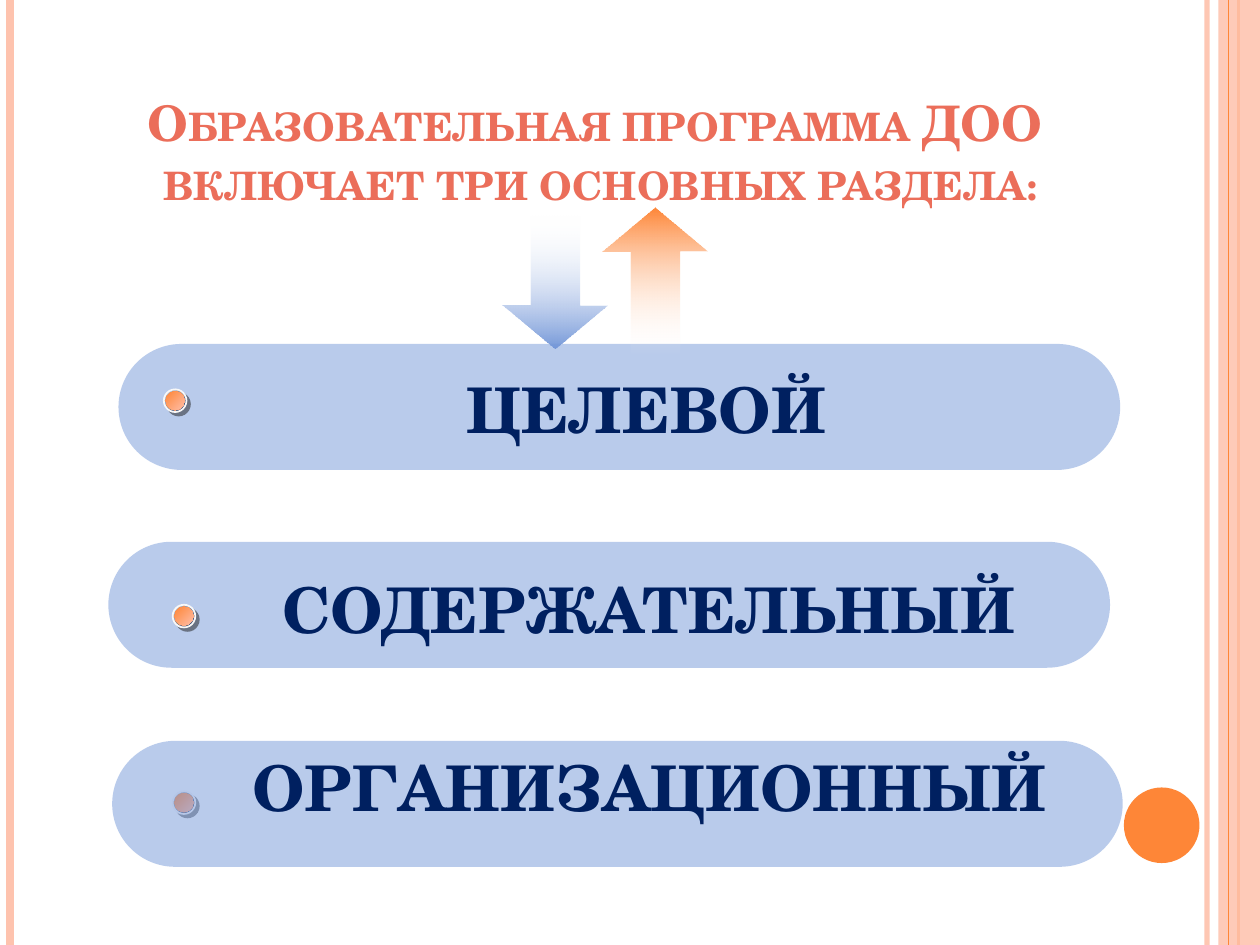
from pptx import Presentation
from pptx.dml.color import RGBColor
from pptx.enum.shapes import MSO_CONNECTOR, MSO_SHAPE as SHAPE
from pptx.enum.text import MSO_ANCHOR as ANCHOR, PP_ALIGN
from pptx.oxml import parse_xml
from pptx.oxml.ns import nsdecls, qn
from pptx.oxml.xmlchemy import OxmlElement
from pptx.util import Inches, Pt

FONT = "TeX Gyre Schola"
COLORS = {
    "peach": "FEC3AE", "orange": "FE8637", "light_orange": "FEBEA8",
    "coral": "EB6E5A", "blue": "7598D9", "navy": "002060", "white": "FFFFFF",
    "ring_light": "DDDDE1", "ring_dark": "223864", "ring_line": "F8F8F8",
    "shadow": "1C1C1C",
}
TITLE = "Образовательная программа ДОО \vвключает три основных раздела:"
TITLE_BOX = (0.86, 0.47, 7.81, 1.25)
STRIPES = [(9.58, "peach", 3, 93), (0.08, "peach", 4.5, 100), (9.83, "orange", 1.5, 100)]
THIN_STRIPE = (9.75, "orange", 0.75, 100)
SECTIONS = [
    {"text": "ЦЕЛЕВОЙ", "bar": (0.94, 2.73, 7.95, 1), "label": (1.64, 2.96, 6.98, 0.65),
     "bullet": (1.3, 3.09)},
    {"text": "СОДЕРЖАТЕЛЬНЫЙ", "bar": (0.86, 4.3, 7.95, 1), "label": (1.72, 4.55, 6.86, 0.65),
     "bullet": (1.37, 4.8)},
    {"text": "ОРГАНИЗАЦИОННЫЙ", "bar": (0.89, 5.88, 8.02, 1), "label": (1.81, 5.96, 6.69, 0.65),
     "bullet": (1.37, 6.28)},
]
DOWN_ARROW = ((3.87, 1.82, 1.07, 0.83), 90, "blue")
UP_ARROW = ((4.61, 1.82, 1.18, 0.83), 270, "orange")
RING, DOT = 0.18, 0.15

prs = Presentation()
prs.slide_width, prs.slide_height = Inches(10), Inches(7.5)
s = prs.slides.add_slide(prs.slide_layouts[6])


def rgb(name):
    return RGBColor.from_string(COLORS[name])


def set_alpha(sp, percent):
    alpha = OxmlElement("a:alpha")
    alpha.set("val", str(percent * 1000))
    sp._element.spPr.find(".//" + qn("a:srgbClr")).append(alpha)


def add_shape(kind, box, fill=None, alpha=100, parent=s):
    sp = parent.shapes.add_shape(kind, *map(Inches, box))
    sp.shadow.inherit = False
    sp.line.fill.background()
    if fill:
        sp.fill.solid()
        sp.fill.fore_color.rgb = rgb(fill)
        if alpha < 100:
            set_alpha(sp, alpha)
    return sp


def set_gradient(sp, names, angle):
    sp.fill.gradient()
    sp.fill.gradient_angle = angle
    for stop, position, name in zip(sp.fill.gradient_stops, (0, 1), names):
        stop.position = position
        stop.color.rgb = rgb(name)


def add_stripe(x, color, width, alpha):
    line = s.shapes.add_connector(
        MSO_CONNECTOR.STRAIGHT, Inches(x), 0, Inches(x), prs.slide_height)
    line.line.color.rgb = rgb(color)
    line.line.width = Pt(width)
    if alpha < 100:
        set_alpha(line, alpha)
    line._element.spPr.append(OxmlElement("a:effectLst"))


def add_text(text, box, size, color, anchor=ANCHOR.TOP):
    tf = s.shapes.add_textbox(*map(Inches, box)).text_frame
    tf.word_wrap = True
    tf.vertical_anchor = anchor
    p = tf.paragraphs[0]
    p.text = text
    p.alignment = PP_ALIGN.CENTER
    p.font.name, p.font.size, p.font.bold = FONT, Pt(size), True
    p.font.color.rgb = rgb(color)
    return p


def add_arrow(box, rotation, color):
    sp = add_shape(SHAPE.RIGHT_ARROW, box)
    sp.adjustments[0], sp.adjustments[1] = 0.465, 0.421
    sp.rotation = rotation
    set_gradient(sp, ("white", color), 0)
    set_alpha(sp, 0)


def add_bullet(x, y):
    group = s.shapes.add_group_shape()
    ring = add_shape(SHAPE.OVAL, (x, y, RING, RING), parent=group)
    set_gradient(ring, ("ring_light", "ring_dark"), 315)
    ring.line.color.rgb = rgb("ring_line")
    ring.line.width = Pt(1)
    ring._element.spPr.find(qn("a:effectLst")).append(parse_xml(
        f'<a:outerShdw {nsdecls("a")} dist="{Pt(2.8)}" dir="2700000" algn="ctr" rotWithShape="0">'
        f'<a:srgbClr val="{COLORS["shadow"]}"><a:alpha val="50000"/></a:srgbClr></a:outerShdw>'))
    inset = (RING - DOT) / 2
    dot = add_shape(SHAPE.OVAL, (x + inset, y + inset, DOT, DOT), parent=group)
    set_gradient(dot, ("orange", "light_orange"), 315)


def add_bar(section):
    add_shape(SHAPE.ROUNDED_RECTANGLE, section["bar"], "blue", 50).adjustments[0] = 0.5


def add_label(section):
    add_text(section["text"], section["label"], 36, "navy").line_spacing = 0.9


for stripe in STRIPES:
    add_stripe(*stripe)
add_shape(SHAPE.RECTANGLE, (9.67, 0, 0.33, 7.5), "peach", 87)
add_stripe(*THIN_STRIPE)
add_shape(SHAPE.OVAL, (8.92, 6.25, 0.6, 0.6), "orange")

title = add_text(TITLE, TITLE_BOX, 28, "coral", ANCHOR.BOTTOM)
title.font._element.set("cap", "small")

goal, content, organization = SECTIONS
add_arrow(*DOWN_ARROW)
add_bullet(*organization["bullet"])
add_bar(goal)
add_label(goal)
add_arrow(*UP_ARROW)
for section in (content, organization):
    add_bar(section)
for section in (content, organization):
    add_label(section)
for section in (content, goal):
    add_bullet(*section["bullet"])

prs.save("out.pptx")
